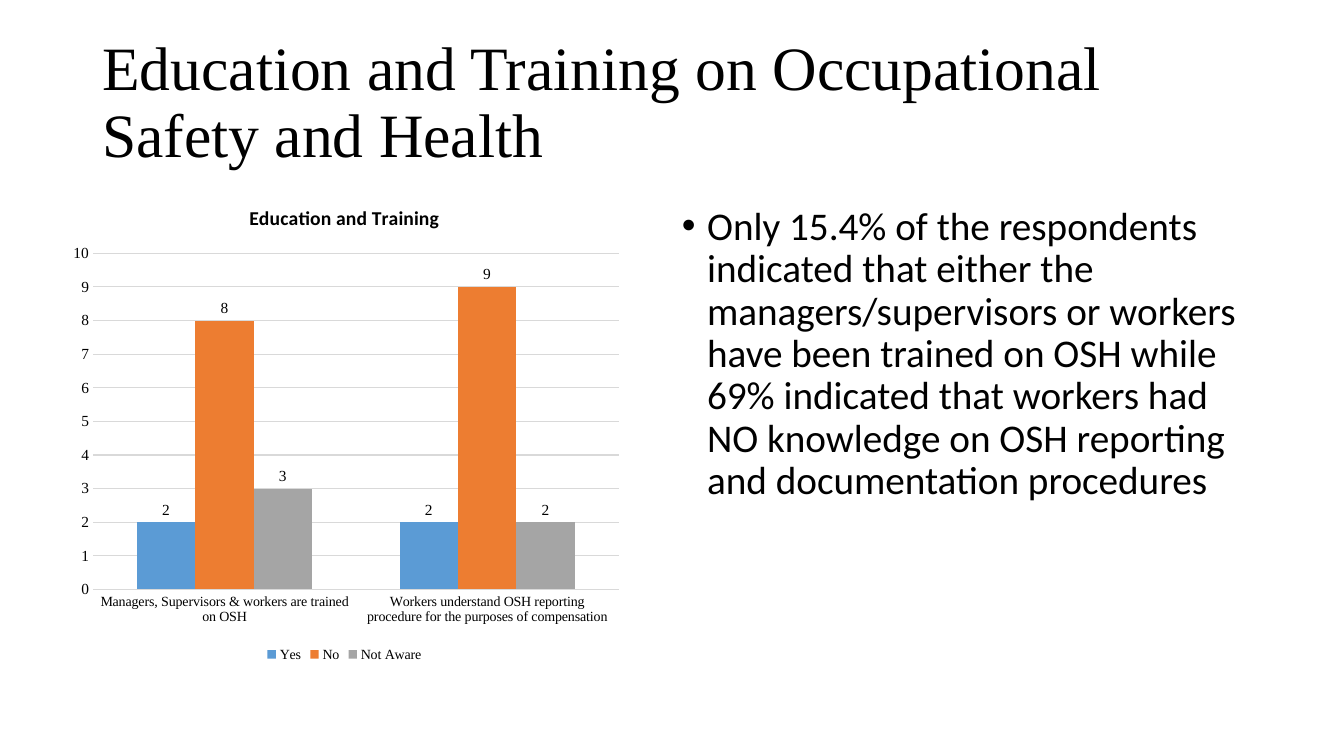
from lxml.etree import SubElement
from pptx import Presentation
from pptx.chart.data import CategoryChartData
from pptx.dml.color import RGBColor
from pptx.enum.chart import (XL_CHART_TYPE, XL_LABEL_POSITION,
                             XL_LEGEND_POSITION, XL_TICK_MARK)
from pptx.enum.text import MSO_ANCHOR
from pptx.oxml import parse_xml
from pptx.oxml.ns import nsdecls, qn
from pptx.util import Pt

TITLE = "Education and Training on Occupational Safety and Health"
FINDING = ("Only 15.4% of the respondents indicated that either the "
           "managers/supervisors or workers have been trained on OSH while "
           "69% indicated that workers had NO knowledge on OSH reporting "
           "and documentation procedures")
CHART_TITLE = "Education and Training"
QUESTIONS = ["Managers, Supervisors & workers are trained on OSH",
             "Workers understand OSH reporting procedure for the purposes of compensation"]
ANSWERS = {"Yes": (2, 2), "No": (8, 9), "Not Aware": (3, 2)}

THEME = {
    "serif": "Times New Roman", "sans": "Calibri",
    "ink": "000000", "grid": "D9D9D9",
    "series": ["5B9BD5", "ED7D31", "A5A5A5"],
    "title": 44, "body": 28, "chart_title": 14, "value": 11, "small": 10,
}
# left, top, width, height in points
BOXES = {"title": (66, 16, 828, 117), "body": (480, 144, 414, 343),
         "chart": (42, 133, 408, 343)}
# plot area as fractions of the chart
PLOT = {"x": 0.06, "y": 0.14, "w": 0.92, "h": 0.7}
INDENT = 18


def box(name):
    return [Pt(v) for v in BOXES[name]]


def set_font(font, face, size, bold=False):
    values = {"name": THEME[face], "size": Pt(THEME[size]), "bold": bold}
    for key, value in values.items():
        setattr(font, key, value)
    font.color.rgb = RGBColor.from_string(THEME["ink"])


def add_text(s, name, text, face, anchor):
    tf = s.shapes.add_textbox(*box(name)).text_frame
    for key, value in {"word_wrap": True, "vertical_anchor": anchor}.items():
        setattr(tf, key, value)
    p = tf.paragraphs[0]
    p.line_spacing = 0.9
    r = p.add_run()
    r.text = text
    set_font(r.font, face, name)
    return p


def add_bullet(p):
    p.space_before = Pt(10)
    pPr = p._p.get_or_add_pPr()
    pPr.set("marL", str(Pt(INDENT)))
    pPr.set("indent", str(-Pt(INDENT)))
    SubElement(pPr, qn("a:buFont")).set("typeface", "Arial")
    SubElement(pPr, qn("a:buChar")).set("char", "•")


def fix_plot_area(chart):
    """Pin the inner plot area to the PLOT fractions."""
    area = chart._chartSpace.chart.plotArea
    for old in area.findall(qn("c:layout")):
        area.remove(old)
    values = "".join(f'<c:{k} val="{v}"/>' for k, v in PLOT.items())
    area.insert(0, parse_xml(
        f'<c:layout {nsdecls("c")}><c:manualLayout><c:layoutTarget val="inner"/>'
        f'<c:xMode val="edge"/><c:yMode val="edge"/>{values}'
        '</c:manualLayout></c:layout>'))


def add_answer_chart(s):
    data = CategoryChartData()
    data.categories = QUESTIONS
    for name, counts in ANSWERS.items():
        data.add_series(name, counts)
    chart = s.shapes.add_chart(XL_CHART_TYPE.COLUMN_CLUSTERED,
                               *box("chart"), data).chart
    set_font(chart.font, "sans", "small")
    chart.has_title = True
    r = chart.chart_title.text_frame.paragraphs[0].add_run()
    r.text = CHART_TITLE
    set_font(r.font, "sans", "chart_title", bold=True)
    chart.chart_title.include_in_layout = False

    chart.has_legend = True
    chart.legend.position = XL_LEGEND_POSITION.BOTTOM
    chart.legend.include_in_layout = False
    set_font(chart.legend.font, "serif", "small")

    for axis, size in ((chart.category_axis, "small"), (chart.value_axis, "value")):
        axis.major_tick_mark = axis.minor_tick_mark = XL_TICK_MARK.NONE
        axis.format.line.fill.background()
        set_font(axis.tick_labels.font, "serif", size)
    value_axis = chart.value_axis
    limits = {"minimum_scale": 0, "maximum_scale": 10, "major_unit": 1}
    for key, value in limits.items():
        setattr(value_axis, key, value)
    line = value_axis.major_gridlines.format.line
    line.width = Pt(0.75)
    line.color.rgb = RGBColor.from_string(THEME["grid"])

    plot = chart.plots[0]
    for key, value in {"gap_width": 150, "overlap": 0,
                       "vary_by_categories": False}.items():
        setattr(plot, key, value)
    for series, color in zip(plot.series, THEME["series"]):
        series.format.fill.solid()
        series.format.fill.fore_color.rgb = RGBColor.from_string(color)
        labels = series.data_labels
        labels.show_value = True
        labels.position = XL_LABEL_POSITION.OUTSIDE_END
        set_font(labels.font, "serif", "value")
    fix_plot_area(chart)


def main():
    prs = Presentation()
    prs.slide_width, prs.slide_height = Pt(960), Pt(540)
    s = prs.slides.add_slide(prs.slide_layouts[6])
    add_text(s, "title", TITLE, "serif", MSO_ANCHOR.MIDDLE)
    add_bullet(add_text(s, "body", FINDING, "sans", MSO_ANCHOR.TOP))
    add_answer_chart(s)
    prs.save("out.pptx")


if __name__ == "__main__":
    main()
